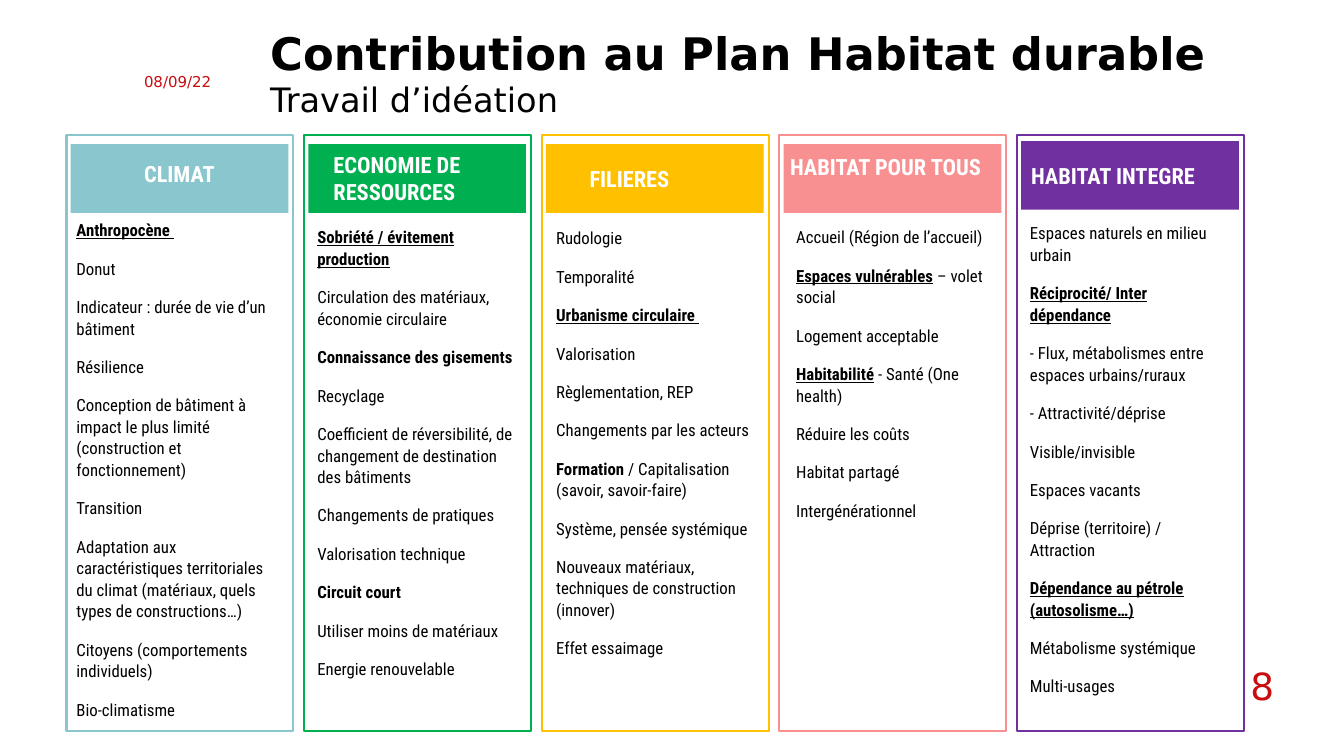
from pptx import Presentation
from pptx.dml.color import RGBColor
from pptx.enum.shapes import MSO_SHAPE
from pptx.enum.text import MSO_ANCHOR, MSO_AUTO_SIZE, PP_ALIGN
from pptx.util import Pt

BLACK = RGBColor(0x00, 0x00, 0x00)
WHITE = RGBColor(0xFF, 0xFF, 0xFF)
RED = RGBColor(0xC9, 0x0C, 0x0F)
TEAL = RGBColor(0x8A, 0xC6, 0xCD)
GREEN = RGBColor(0x00, 0xB0, 0x50)
AMBER = RGBColor(0xFF, 0xC0, 0x00)
PINK = RGBColor(0xF8, 0x8F, 0x91)
PURPLE = RGBColor(0x70, 0x30, 0xA0)

SANS = "DejaVu Sans"
CONDENSED = "Roboto Condensed"

TITLE = dict(name=SANS, size=Pt(32), bold=True)
SUBTITLE = dict(name=SANS, size=Pt(24), bold=False)
DATE = dict(name=SANS, size=Pt(10.7))
NUMBER = dict(name=SANS, size=Pt(26.7))
HEADING = dict(name=CONDENSED, size=Pt(16), bold=True)
PLAIN = dict(name=CONDENSED, size=Pt(12))
BOLD = dict(PLAIN, bold=True)
KEY = dict(BOLD, underline=True)

# Column grid, in points
LEFT, STEP = 47.5, 169.75
PANEL_TOP, PANEL_W, PANEL_H = 96.5, 162, 425.5
BAND_INSET, BAND_W, BAND_H = 3, 155.5, 49

# Colour, band top, heading and its box, text box (left, top, width, height), items.
# An item is a plain string or a list of (text, format) runs.
COLUMNS = [
    (TEAL, 103, "CLIMAT", (95.8, 110.9, 77, 26.6), (47.5, 152.6, 161.3, 375), [
        [("Anthropocène ", KEY)],
        "Donut",
        "Indicateur : durée de vie d’un bâtiment",
        "Résilience",
        "Conception de bâtiment à impact le plus limité (construction et fonctionnement)",
        "Transition",
        "Adaptation aux caractéristiques territoriales du climat "
        "(matériaux, quels types de constructions…)",
        "Citoyens (comportements individuels)",
        "Bio-climatisme",
    ]),
    (GREEN, 103, "ECONOMIE DE RESSOURCES", (231.1, 104.4, 139.7, 46),
     (219.6, 157.7, 158.4, 333.4), [
        [("Sobriété / évitement production", KEY)],
        "Circulation des matériaux, économie circulaire",
        [("Connaissance des gisements", BOLD)],
        "Recyclage",
        "Coefficient de réversibilité, de changement de destination des bâtiments",
        "Changements de pratiques",
        "Valorisation technique",
        [("Circuit court", BOLD)],
        "Utiliser moins de matériaux",
        "Energie renouvelable",
    ]),
    (AMBER, 103, "FILIERES", (414, 114.5, 97.2, 26.6), (390.2, 158.4, 155.5, 317.5), [
        "Rudologie",
        "Temporalité",
        [("Urbanisme circulaire ", KEY)],
        "Valorisation",
        "Règlementation, REP",
        "Changements par les acteurs",
        [("Formation", BOLD), (" / Capitalisation (savoir, savoir-faire)", PLAIN)],
        "Système, pensée systémique",
        "Nouveaux matériaux, techniques de construction (innover)",
        "Effet essaimage",
    ]),
    (PINK, 103, "HABITAT POUR TOUS", (557.3, 105.8, 155.5, 26.6),
     (561.6, 157.7, 151.2, 218.9), [
        "Accueil (Région de l’accueil)",
        [("Espaces vulnérables", KEY), (" – volet social", PLAIN)],
        "Logement acceptable",
        [("Habitabilité", KEY), (" - Santé (One health)", PLAIN)],
        "Réduire les coûts",
        "Habitat partagé",
        "Intergénérationnel",
    ]),
    (PURPLE, 100.8, "HABITAT INTEGRE", (729.4, 112.3, 172.8, 26.6),
     (728.6, 154.8, 155.5, 349.2), [
        "Espaces naturels en milieu urbain",
        [("Réciprocité/ Inter dépendance", KEY)],
        "- Flux, métabolismes entre espaces urbains/ruraux",
        "- Attractivité/déprise",
        "Visible/invisible",
        "Espaces vacants",
        "Déprise (territoire) / Attraction",
        [("Dépendance au pétrole (autosolisme…)", KEY)],
        "Métabolisme systémique",
        "Multi-usages",
    ]),
]


def add_run(p, text, fmt, color):
    r = p.add_run()
    r.text = text
    for name, value in fmt.items():
        setattr(r.font, name, value)
    r.font.color.rgb = color


def add_text(s, box, text, fmt, color, align=PP_ALIGN.LEFT, anchor=MSO_ANCHOR.TOP):
    tf = s.shapes.add_textbox(*map(Pt, box)).text_frame
    tf.word_wrap = True
    tf.vertical_anchor = anchor
    p = tf.paragraphs[0]
    p.alignment = align
    add_run(p, text, fmt, color)


def add_items(s, box, items):
    tf = s.shapes.add_textbox(*map(Pt, box)).text_frame
    tf.word_wrap = True
    for i, item in enumerate(items):
        p = tf.add_paragraph() if i else tf.paragraphs[0]
        p.line_spacing = 1.07
        p.space_before = Pt(6 if i else 0)
        p.space_after = Pt(6)
        for text, fmt in [(item, PLAIN)] if isinstance(item, str) else item:
            add_run(p, text, fmt, BLACK)


def add_rect(s, box, fill=None, line=None):
    sp = s.shapes.add_shape(MSO_SHAPE.RECTANGLE, *map(Pt, box))
    sp.shadow.inherit = False
    for part, color in ((sp.fill, fill), (sp.line.fill, line)):
        if color is None:
            part.background()
        else:
            part.solid()
            part.fore_color.rgb = color
    if line is not None:
        sp.line.width = Pt(1.5)


def add_title(s):
    sp = s.shapes.title
    sp.left, sp.top, sp.width, sp.height = map(Pt, (185.8, 12.2, 742.3, 46))
    tf = sp.text_frame
    tf.auto_size = MSO_AUTO_SIZE.NONE
    tf.vertical_anchor = MSO_ANCHOR.TOP
    tf.margin_top = Pt(6)
    lines = [("Contribution au Plan Habitat durable", TITLE), ("Travail d’idéation", SUBTITLE)]
    for i, (text, fmt) in enumerate(lines):
        p = tf.add_paragraph() if i else tf.paragraphs[0]
        p.alignment = PP_ALIGN.LEFT
        add_run(p, text, fmt, BLACK)


def main():
    prs = Presentation()
    prs.slide_width, prs.slide_height = Pt(960), Pt(540)
    s = prs.slides.add_slide(prs.slide_layouts[5])

    # Title, date and slide number
    add_title(s)
    add_text(s, (95.8, 43.9, 72, 28.8), "08/09/22", DATE, RED, anchor=MSO_ANCHOR.MIDDLE)
    add_text(s, (822.2, 470.2, 95, 39.6), "8", NUMBER, RED, align=PP_ALIGN.RIGHT)

    # Five themed columns
    for i, (color, band_top, heading, heading_box, items_box, items) in enumerate(COLUMNS):
        x = LEFT + i * STEP
        add_rect(s, (x, PANEL_TOP, PANEL_W, PANEL_H), line=color)
        add_rect(s, (x + BAND_INSET, band_top, BAND_W, BAND_H), fill=color)
        add_text(s, heading_box, heading, HEADING, WHITE)
        add_items(s, items_box, items)

    prs.save("out.pptx")


if __name__ == "__main__":
    main()
